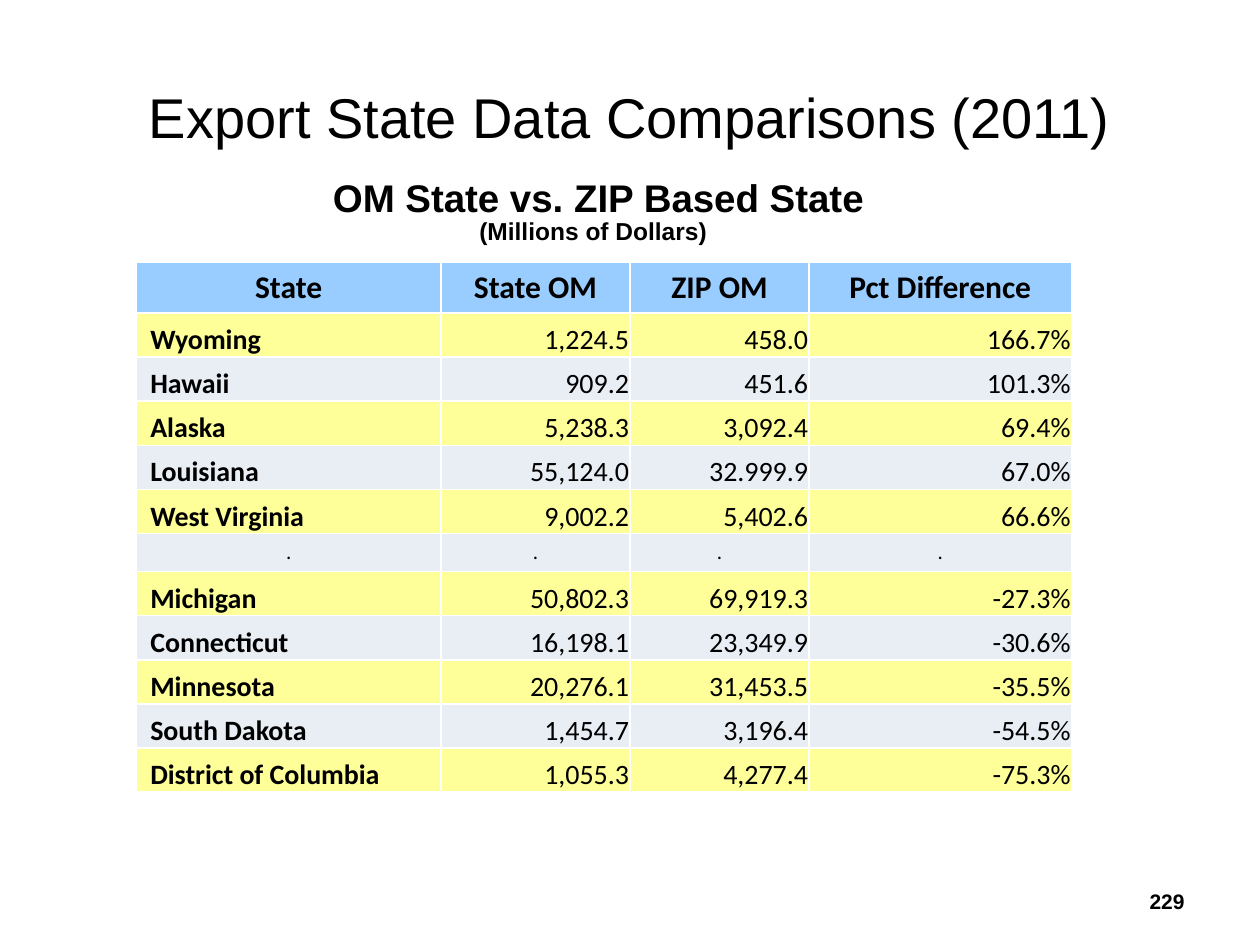
import pptx
import pptx.dml.color
import pptx.enum.text
import pptx.util

Cm = pptx.util.Cm
Pt = pptx.util.Pt
ALIGN = pptx.enum.text.PP_ALIGN
ANCHOR = pptx.enum.text.MSO_ANCHOR

BLACK = pptx.dml.color.RGBColor(0x00, 0x00, 0x00)
HEADER_BLUE = pptx.dml.color.RGBColor(0x99, 0xCC, 0xFF)
YELLOW = pptx.dml.color.RGBColor(0xFF, 0xFF, 0x99)
PALE_GREY = pptx.dml.color.RGBColor(0xE9, 0xED, 0xF4)

HEADINGS = ("State", "State OM", "ZIP OM", "Pct Difference")
ELLIPSIS = (".",) * len(HEADINGS)
STATES = [
    ("Wyoming", "1,224.5", "458.0", "166.7%"),
    ("Hawaii", "909.2", "451.6", "101.3%"),
    ("Alaska", "5,238.3", "3,092.4", "69.4%"),
    ("Louisiana", "55,124.0", "32.999.9", "67.0%"),
    ("West Virginia", "9,002.2", "5,402.6", "66.6%"),
    ELLIPSIS,
    ("Michigan", "50,802.3", "69,919.3", "-27.3%"),
    ("Connecticut", "16,198.1", "23,349.9", "-30.6%"),
    ("Minnesota", "20,276.1", "31,453.5", "-35.5%"),
    ("South Dakota", "1,454.7", "3,196.4", "-54.5%"),
    ("District of Columbia", "1,055.3", "4,277.4", "-75.3%"),
]
COLUMN_WIDTHS = (6.14, 3.81, 3.61, 5.29)
HEADER_HEIGHT, STATE_HEIGHT, ELLIPSIS_HEIGHT = 0.64, 0.89, 0.74
TIGHT = {"margin_left": Cm(0.02), "margin_right": Cm(0.02),
         "margin_top": Cm(0.02), "margin_bottom": 0,
         "vertical_anchor": ANCHOR.BOTTOM}
NAME_CELL = {**TIGHT, "margin_left": Cm(0.28)}


def apply(target, values):
    for name, value in values.items():
        setattr(target, name, value)


class ComparisonSlide:
    heading_font = "Arial"
    table_font = "Calibri"

    def __init__(self, slide):
        self.slide = slide

    def fill_paragraph(self, paragraph, text, align, font):
        paragraph.text = text
        paragraph.alignment = align
        apply(paragraph.font, font)
        paragraph.font.color.rgb = BLACK

    def text(self, text, box, size, bold=True, align=ALIGN.CENTER,
             anchor=ANCHOR.TOP):
        frame = self.slide.shapes.add_textbox(*map(Cm, box)).text_frame
        apply(frame, {"word_wrap": True, "vertical_anchor": anchor})
        font = {"name": self.heading_font, "size": Pt(size), "bold": bold}
        self.fill_paragraph(frame.paragraphs[0], text, align, font)

    def cell(self, cell, text, fill, size, bold=False, align=ALIGN.CENTER,
             layout=None):
        cell.fill.solid()
        cell.fill.fore_color.rgb = fill
        apply(cell, layout or {})
        font = {"name": self.table_font, "size": Pt(size), "bold": bold}
        self.fill_paragraph(cell.text_frame.paragraphs[0], text, align, font)

    def state_table(self, left, top):
        heights = [HEADER_HEIGHT] + [
            ELLIPSIS_HEIGHT if state is ELLIPSIS else STATE_HEIGHT
            for state in STATES]
        table = self.slide.shapes.add_table(
            len(heights), len(HEADINGS), Cm(left), Cm(top),
            Cm(sum(COLUMN_WIDTHS)), Cm(sum(heights))).table
        table.horz_banding = False
        for column, width in zip(table.columns, COLUMN_WIDTHS):
            column.width = Cm(width)
        for row, height in zip(table.rows, heights):
            row.height = Cm(height)

        for col, heading in enumerate(HEADINGS):
            self.cell(table.cell(0, col), heading, HEADER_BLUE, 18, bold=True)
        for row, state in enumerate(STATES, start=1):
            fill = YELLOW if row % 2 else PALE_GREY
            for col, value in enumerate(state):
                cell = table.cell(row, col)
                if state is ELLIPSIS:
                    self.cell(cell, value, fill, 12)
                elif col == 0:
                    self.cell(cell, value, fill, 16, True, ALIGN.LEFT, NAME_CELL)
                else:
                    self.cell(cell, value, fill, 16, False, ALIGN.RIGHT, TIGHT)


def main():
    deck = pptx.Presentation()
    apply(deck, {"slide_width": Cm(25.4), "slide_height": Cm(19.05)})
    page = ComparisonSlide(deck.slides.add_slide(deck.slide_layouts[6]))
    page.text("Export State Data Comparisons (2011)", (1.27, 0.76, 22.86, 3.18),
              32, bold=False, anchor=ANCHOR.MIDDLE)
    page.state_table(2.75, 5.29)
    page.text("229", (18.2, 17.65, 5.93, 1.02), 12, align=ALIGN.RIGHT,
              anchor=ANCHOR.MIDDLE)
    page.text("OM State vs. ZIP Based State", (4.02, 3.38, 16.09, 1.2), 22)
    page.text("(Millions of Dollars)", (9.1, 4.24, 5.72, 0.86), 14)
    deck.save("out.pptx")


if __name__ == "__main__":
    main()
